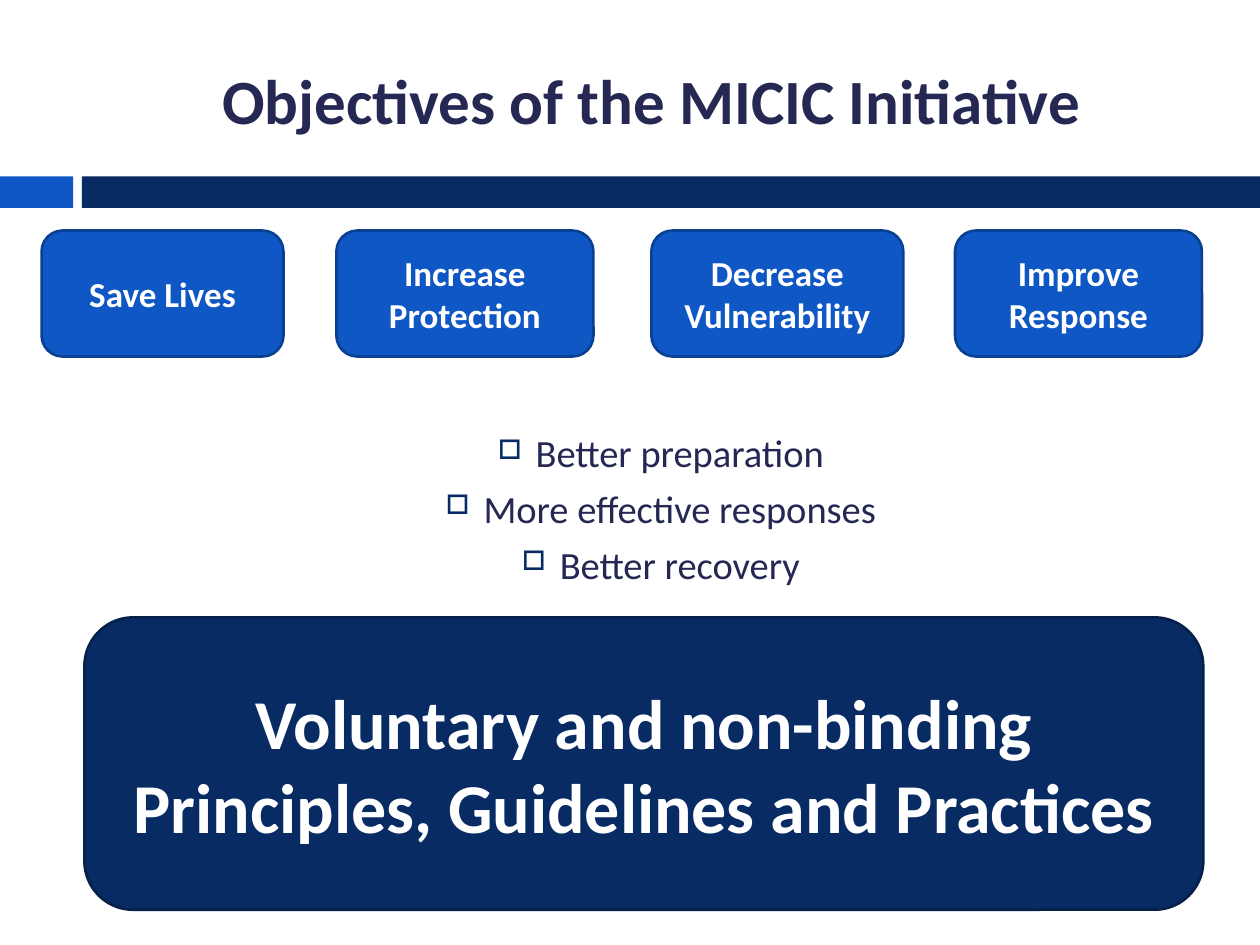
"""Builds the slide on the objectives of the MICIC Initiative."""
from dataclasses import dataclass

import pptx
import pptx.dml.color
import pptx.enum.shapes
import pptx.enum.text
import pptx.oxml.ns
import pptx.oxml.xmlchemy
import pptx.util

Inches = pptx.util.Inches
Pt = pptx.util.Pt
Kind = pptx.enum.shapes.MSO_SHAPE


@dataclass(frozen=True)
class Theme:
    """Colours, font and type sizes of the slide."""
    blue: str = "0E57C4"
    blue_edge: str = "0A4091"
    navy: str = "072B62"
    navy_edge: str = "052049"
    ink: str = "242852"
    white: str = "FFFFFF"
    font: str = "Calibri"
    title_size: int = 36
    bullet_size: int = 22
    card_size: int = 20
    banner_size: int = 40


THEME = Theme()


def rgb(value):
    """Return the colour object for a hexadecimal string."""
    return pptx.dml.color.RGBColor.from_string(value)


def write_text(shape, lines, *, size, color, bold=False, space_after=0,
               anchor=pptx.enum.text.MSO_ANCHOR.MIDDLE):
    """Write centred lines, one paragraph each, and return the paragraphs."""
    frame = shape.text_frame
    frame.word_wrap = True
    frame.vertical_anchor = anchor
    frame.text = "\n".join(lines)
    for paragraph in frame.paragraphs:
        paragraph.alignment = pptx.enum.text.PP_ALIGN.CENTER
        paragraph.space_after = Pt(space_after)
        font = paragraph.runs[0].font
        font.name, font.size, font.bold = THEME.font, Pt(size), bold
        font.color.rgb = rgb(color)
    return frame.paragraphs


def add_box(slide, box, fill, edge=None, kind=Kind.ROUNDED_RECTANGLE):
    """Add a filled shape, outlined when an edge colour is given."""
    shape = slide.shapes.add_shape(kind, *map(Inches, box))
    shape.shadow.inherit = False
    shape.fill.solid()
    shape.fill.fore_color.rgb = rgb(fill)
    if edge:
        shape.line.color.rgb = rgb(edge)
        shape.line.width = Pt(1.5)
    else:
        shape.line.fill.background()
    return shape


def add_bullet(paragraph, character, indent, hanging):
    """Give a paragraph a hanging bullet in the navy colour."""
    properties = paragraph._p.get_or_add_pPr()
    properties.set("marL", str(Inches(indent)))
    properties.set("indent", str(-Inches(hanging)))

    def add_child(parent, tag, **attributes):
        child = pptx.oxml.xmlchemy.OxmlElement(tag)
        for name, value in attributes.items():
            child.set(name, value)
        parent.append(child)
        return child

    add_child(add_child(properties, "a:buClr"), "a:srgbClr", val=THEME.navy)
    add_child(properties, "a:buSzPct", val="70000")
    add_child(properties, "a:buChar", char=character)


def add_title(slide, box, text):
    """Add the slide title."""
    title = slide.shapes.add_textbox(*map(Inches, box))
    write_text(title, [text], size=THEME.title_size, color=THEME.ink, bold=True)


def add_divider(slide, box):
    """Add the two-part bar under the title."""
    left, top, width, height = box
    accent, gap = 0.58, 0.07
    start = accent + gap
    add_box(slide, (left, top, accent, height), THEME.blue, kind=Kind.RECTANGLE)
    add_box(slide, (left + start, top, width - start, height), THEME.navy,
            kind=Kind.RECTANGLE)


def add_goals(slide, box, goals):
    """Add the row of goal cards, each with its offset and width."""
    left, top, _, height = box
    for text, offset, width in goals:
        card = add_box(slide, (left + offset, top, width, height),
                       THEME.blue, THEME.blue_edge)
        write_text(card, [text], size=THEME.card_size, color=THEME.white, bold=True)


def add_outcomes(slide, box, outcomes):
    """Add the bulleted list of outcomes."""
    body = slide.shapes.add_textbox(*map(Inches, box))
    paragraphs = write_text(body, outcomes, size=THEME.bullet_size, color=THEME.ink,
                            space_after=5.5, anchor=pptx.enum.text.MSO_ANCHOR.TOP)
    for paragraph in paragraphs:
        add_bullet(paragraph, "□", indent=0.7, hanging=0.3)


def add_banner(slide, box, lines):
    """Add the large closing statement."""
    banner = add_box(slide, box, THEME.navy, THEME.navy_edge)
    write_text(banner, lines, size=THEME.banner_size, color=THEME.white, bold=True)


def main():
    """Build and save the presentation."""
    presentation = pptx.Presentation()
    presentation.slide_width, presentation.slide_height = Inches(10), Inches(7.5)
    slide = presentation.slides.add_slide(presentation.slide_layouts[6])
    add_divider(slide, (0, 1.4, 10, 0.25))
    add_title(slide, (0.71, 0.25, 8.92, 1.08), "Objectives of the MICIC Initiative")
    add_outcomes(slide, (0.17, 3.36, 9.75, 1.4),
                 ["Better preparation", "More effective responses", "Better recovery"])
    add_goals(slide, (0.33, 1.83, 9.21, 1), [
        ("Save Lives", 0, 1.92),
        ("Increase Protection", 2.34, 2.04),
        ("Decrease Vulnerability", 4.84, 2),
        ("Improve Response", 7.25, 1.96),
    ])
    add_banner(slide, (0.67, 4.9, 8.88, 2.32),
               ["Voluntary and non-binding", "Principles, Guidelines and Practices"])
    presentation.save("out.pptx")


if __name__ == "__main__":
    main()
